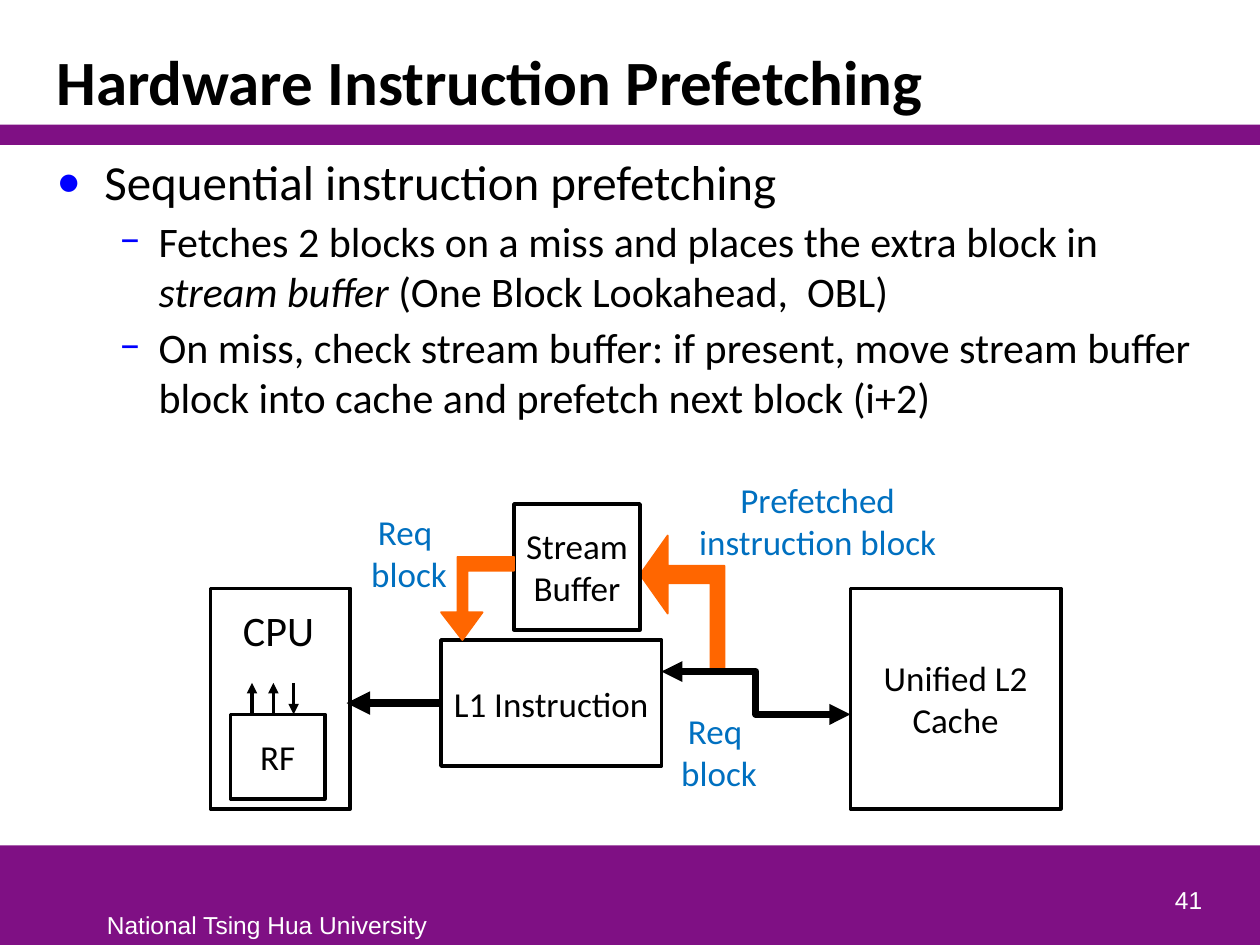
"""Build a slide on hardware instruction prefetching with its block diagram."""
from lxml import etree
from pptx import Presentation
from pptx.dml.color import RGBColor
from pptx.enum.shapes import MSO_CONNECTOR, MSO_SHAPE
from pptx.enum.text import MSO_ANCHOR, PP_ALIGN
from pptx.oxml.ns import qn
from pptx.util import Inches, Pt

RECT, STRAIGHT = MSO_SHAPE.RECTANGLE, MSO_CONNECTOR.STRAIGHT
TOP, MIDDLE, BOTTOM = MSO_ANCHOR.TOP, MSO_ANCHOR.MIDDLE, MSO_ANCHOR.BOTTOM
LEFT, CENTER, RIGHT = PP_ALIGN.LEFT, PP_ALIGN.CENTER, PP_ALIGN.RIGHT
PURPLE = RGBColor(0x7F, 0x10, 0x84)
BLACK = RGBColor(0, 0, 0)
WHITE = RGBColor(0xFF, 0xFF, 0xFF)
ORANGE = RGBColor(0xFF, 0x66, 0x00)
LABEL_BLUE = RGBColor(0x00, 0x70, 0xC0)
BULLET_BLUE = "0000FF"

TITLE = "Hardware Instruction Prefetching"
BULLETS = [
    (0, [("Sequential instruction prefetching", False)]),
    (1, [("Fetches 2 blocks on a miss and places the extra block in ", False),
         ("stream buffer", True),
         (" (One Block Lookahead,  OBL)", False)]),
    (1, [("On miss, check stream buffer: if present, move stream buffer "
          "block into cache and prefetch next block (i+2)", False)]),
]
LEVELS = [("•", 28, 0.38, -0.38), ("−", 24, 0.81, -0.31)]
BANDS = [(0, 6.71, 10, 0.79), (0, 0.99, 10, 0.16)]
BLOCKS = {
    "CPU": ([], (1.67, 4.67, 1.11, 1.75), {}),
    "L1": (["L1 Instruction"], (3.5, 5.08, 1.75, 1), {}),
    "L2": (["Unified L2 Cache"], (6.75, 4.67, 1.67, 1.75), {}),
    "RF": (["RF"], (1.83, 5.67, 0.75, 0.67), {"wrap": False}),
    "Buffer": (["Stream", "Buffer"], (4.08, 4, 1, 1), {"inset": 0}),
}
REGISTER_ARROWS = [(2, 5.67, 5.42), (2.17, 5.67, 5.42), (2.33, 5.42, 5.67)]
LABELS = [
    (["Prefetched", "instruction block"], (5.44, 3.75, 2.1, 0.77)),
    (["Req", " block"], (2.78, 4, 0.87, 0.77)),
    (["Req", " block"], (5.24, 5.58, 0.87, 0.77)),
]
PREFETCH_ARROW = [(5.08, 4.56), (5.3, 4.87), (5.3, 4.63), (5.64, 4.63), (5.64, 5.33),
                  (5.75, 5.33), (5.75, 4.49), (5.3, 4.49), (5.3, 4.25)]
REQUEST_ARROW = [(3.67, 5.08), (3.83, 4.86), (3.71, 4.86), (3.71, 4.53), (4.08, 4.53),
                 (4.08, 4.42), (3.63, 4.42), (3.63, 4.86), (3.5, 4.86)]
L1_L2_LINK = [(5.25, 5.33), (6, 5.33), (6, 5.67), (6.75, 5.67)]


def inches(values):
    return [Inches(value) for value in values]


def add_bullet(paragraph, level):
    char, _, margin, indent = LEVELS[level]
    paragraph.level = level
    props = paragraph._p.get_or_add_pPr()
    props.set("marL", str(Inches(margin)))
    props.set("indent", str(Inches(indent)))
    color = etree.SubElement(props, qn("a:buClr"))
    etree.SubElement(color, qn("a:srgbClr"), val=BULLET_BLUE)
    etree.SubElement(props, qn("a:buFont"), typeface="Calibri")
    etree.SubElement(props, qn("a:buChar"), char=char)


def add_run(paragraph, text, size, color=BLACK, font="Calibri", bold=False, italic=False):
    run = paragraph.add_run()
    run.text = text
    run.font.size, run.font.name = Pt(size), font
    run.font.bold, run.font.italic = bold, italic
    run.font.color.rgb = color


def write(shape, lines, size=20, align=CENTER, anchor=TOP, wrap=True, inset=None,
          spacing=None, **font):
    frame = shape.text_frame
    frame.word_wrap, frame.vertical_anchor = wrap, anchor
    if inset is not None:
        frame.margin_left = frame.margin_right = Inches(inset)
        frame.margin_top = frame.margin_bottom = Inches(inset)
    for index, line in enumerate(lines):
        paragraph = frame.add_paragraph() if index else frame.paragraphs[0]
        paragraph.alignment = align
        if spacing:
            paragraph.line_spacing = spacing
        add_run(paragraph, line, size, **font)


def paint(shape, fill, line=None, width=1):
    shape.shadow.inherit = False
    if fill is None:
        shape.fill.background()
    else:
        shape.fill.solid()
        shape.fill.fore_color.rgb = fill
    if line is None:
        shape.line.fill.background()
    else:
        shape.line.color.rgb = line
        shape.line.width = Pt(width)


def add_heads(shape, *ends):
    outline = shape.line._get_or_add_ln()
    for end in ends:
        etree.SubElement(outline, qn(end), type="triangle")


def add_arrow(shapes, start, stop, width):
    arrow = shapes.add_connector(STRAIGHT, *inches(start + stop))
    arrow.line.color.rgb = BLACK
    arrow.line.width = Pt(width)
    add_heads(arrow, "a:tailEnd")
    etree.SubElement(arrow._element.spPr, qn("a:effectLst"))
    return arrow


def add_outline(shapes, points, closed):
    first, *rest = [inches(point) for point in points]
    builder = shapes.build_freeform(*first)
    builder.add_line_segments(rest, close=closed)
    return builder.convert_to_shape()


def add_bullets(shapes):
    frame = shapes.add_textbox(*inches((0.35, 1.15, 9.29, 5.51))).text_frame
    frame.word_wrap = True
    for index, (level, runs) in enumerate(BULLETS):
        paragraph = frame.add_paragraph() if index else frame.paragraphs[0]
        add_bullet(paragraph, level)
        if index:
            paragraph.space_before = Pt(3)
        for text, italic in runs:
            add_run(paragraph, text, LEVELS[level][1], italic=italic)


def add_diagram(shapes):
    blocks = {}
    for name, (lines, place, style) in BLOCKS.items():
        if name == "Buffer":
            paint(add_outline(shapes, PREFETCH_ARROW, True), ORANGE, ORANGE)
        blocks[name] = shapes.add_shape(RECT, *inches(place))
        paint(blocks[name], WHITE, BLACK, 2)
        write(blocks[name], lines, anchor=MIDDLE, **style)
    paint(add_outline(shapes, REQUEST_ARROW, True), ORANGE, ORANGE)
    write(shapes.add_textbox(*inches((1.67, 4.75, 1.08, 0.5))), ["CPU"], size=24)

    fetch = add_arrow(shapes, (3.5, 5.58), (2.75, 5.58), 4.5)
    fetch.begin_connect(blocks["L1"], 1)
    for x, start, stop in REGISTER_ARROWS:
        add_arrow(shapes, (x, start), (x, stop), 2)
    for lines, place in LABELS:
        write(shapes.add_textbox(*inches(place)), lines, wrap=False, color=LABEL_BLUE)

    link = add_outline(shapes, L1_L2_LINK, False)
    paint(link, None, BLACK, 4)
    add_heads(link, "a:headEnd", "a:tailEnd")


def main():
    deck = Presentation()
    deck.slide_width, deck.slide_height = Inches(10), Inches(7.5)
    shapes = deck.slides.add_slide(deck.slide_layouts[6]).shapes
    for place in BANDS:
        paint(shapes.add_shape(RECT, *inches(place)), PURPLE)
    footer = {"size": 14, "font": "Arial", "color": WHITE}
    write(shapes.add_textbox(*inches((0.75, 7.17, 2.76, 0.33))),
          ["National Tsing Hua University"], align=LEFT, wrap=False, **footer)
    write(shapes.add_textbox(*inches((0.35, 0.25, 9.29, 0.74))), [TITLE],
          size=36, align=LEFT, anchor=BOTTOM, spacing=0.85, bold=True)
    add_bullets(shapes)
    add_diagram(shapes)
    write(shapes.add_textbox(*inches((7.56, 6.81, 2.08, 0.5))), ["41"],
          align=RIGHT, anchor=BOTTOM, **footer)
    deck.save("out.pptx")


if __name__ == "__main__":
    main()
